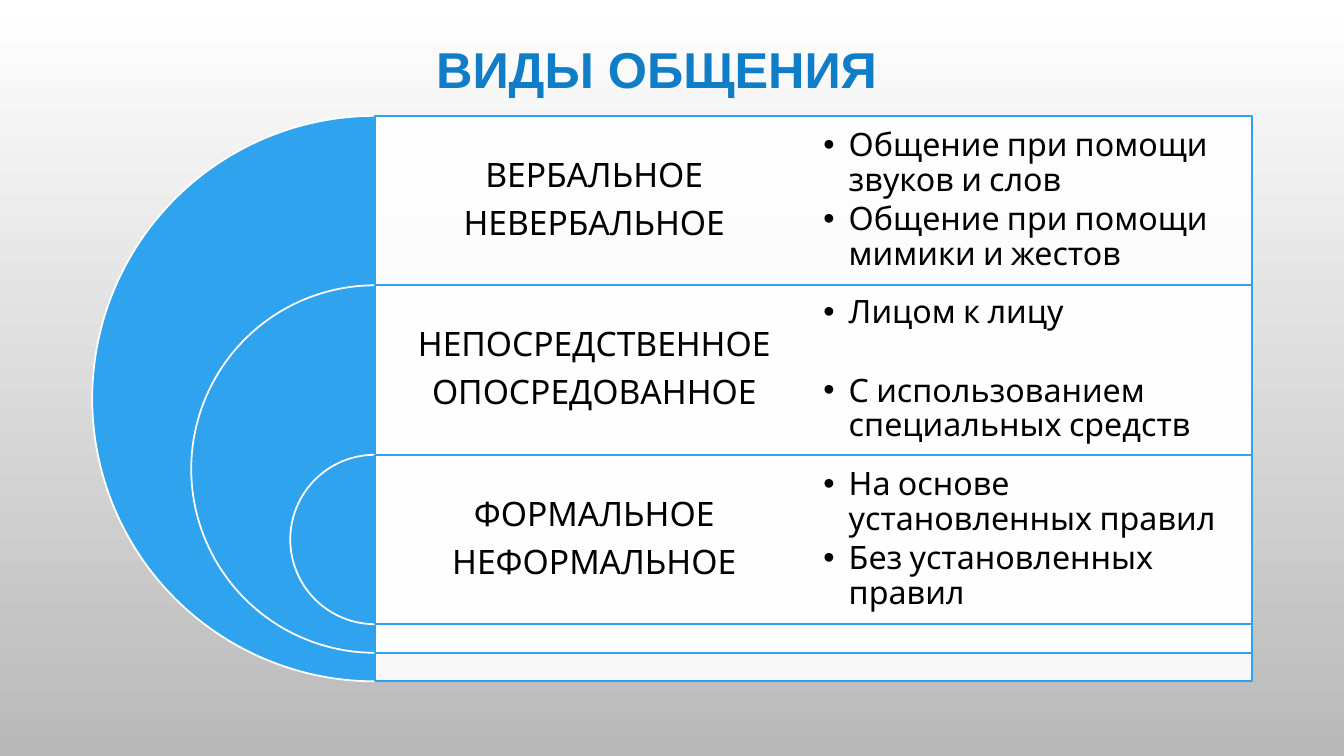
from lxml import etree
from pptx import Presentation
from pptx.dml.color import RGBColor
from pptx.enum.shapes import MSO_SHAPE as Shape
from pptx.enum.text import MSO_ANCHOR as Anchor, MSO_AUTO_SIZE as AutoSize, PP_ALIGN as Align
from pptx.oxml.ns import qn
from pptx.util import Cm, Pt

BLUE, WHITE, BLACK = "2FA3EE", "FFFFFF", "000000"
ROW_HEIGHT = 4.27
NESTING_STEP = 4.99
BULLET_GAP = 3
WIDE_GAP = 31

# Each row: kinds of communication, then (explanation, space after in points)
ROWS = [
    (["ВЕРБАЛЬНОЕ", "НЕВЕРБАЛЬНОЕ"],
     [("Общение при помощи звуков и слов", BULLET_GAP),
      ("Общение при помощи мимики и жестов", BULLET_GAP)]),
    (["НЕПОСРЕДСТВЕННОЕ", "ОПОСРЕДОВАННОЕ"],
     [("Лицом к лицу", WIDE_GAP),
      ("С использованием специальных средств", BULLET_GAP)]),
    (["ФОРМАЛЬНОЕ", "НЕФОРМАЛЬНОЕ"],
     [("На основе установленных правил", BULLET_GAP),
      ("Без установленных правил", BULLET_GAP)]),
]


def rgb(value):
    return RGBColor.from_string(value)


def paint_background(slide):
    fill = slide.background.fill
    fill.gradient()
    fill.gradient_angle = 270
    for stop, color, position in zip(fill.gradient_stops, (WHITE, "B9B9B9"), (0, 1)):
        stop.color.rgb = rgb(color)
        stop.position = position


def write_run(paragraph, text, font_name, size, color, bold=False):
    run = paragraph.add_run()
    run.text = text
    font = run.font
    font.name, font.size, font.bold = font_name, Pt(size), bold
    font.color.rgb = rgb(color)


def add_title(slide, left, top, width, height):
    title = slide.shapes.title
    title.left, title.top, title.width, title.height = map(Cm, (left, top, width, height))
    frame = title.text_frame
    frame.auto_size = AutoSize.NONE
    frame.vertical_anchor = Anchor.MIDDLE
    heading = frame.paragraphs[0]
    heading.alignment, heading.line_spacing = Align.CENTER, 0.9
    write_run(heading, "ВИДЫ ОБЩЕНИЯ", "Arial", 36, "107EC6", bold=True)


def add_filled(slide, preset, box, fill, line):
    shape = slide.shapes.add_shape(preset, *map(Cm, box))
    shape.shadow.inherit = False
    shape.fill.solid()
    shape.fill.fore_color.rgb = rgb(fill)
    shape.line.color.rgb = rgb(line)
    shape.line.width = Pt(1.25)
    return shape


def add_layer(slide, left, top, width, height):
    """Place a half disc to the left of a translucent panel of the same height."""
    half_disc = add_filled(slide, Shape.PIE, (left - height / 2, top, height, height), BLUE, WHITE)
    half_disc.adjustments[0], half_disc.adjustments[1] = 54, 162
    panel = add_filled(slide, Shape.RECTANGLE, (left, top, width, height), WHITE, BLUE)
    panel_color = panel.fill._xPr.find(qn("a:solidFill"))[0]
    etree.SubElement(panel_color, qn("a:alpha"), val="90000")


def add_bullet(paragraph):
    properties = paragraph._p.get_or_add_pPr()
    properties.set("marL", str(Cm(0.64)))
    properties.set("indent", str(-Cm(0.64)))
    etree.SubElement(properties, qn("a:buFont"), typeface="Arial")
    etree.SubElement(properties, qn("a:buChar"), char="•")


def add_cell(slide, box, lines, size, bulleted=False):
    frame = slide.shapes.add_textbox(*map(Cm, box)).text_frame
    frame.word_wrap = True
    frame.vertical_anchor = Anchor.MIDDLE
    frame.margin_left = frame.margin_right = frame.margin_top = frame.margin_bottom = Cm(0.25)
    for index, (text, gap) in enumerate(lines):
        paragraph = frame.add_paragraph() if index else frame.paragraphs[0]
        if bulleted:
            add_bullet(paragraph)
        else:
            paragraph.alignment = Align.CENTER
        paragraph.line_spacing, paragraph.space_after = 0.9, Pt(gap)
        write_run(paragraph, text, "Cabin", size, BLACK)


def add_kinds_diagram(slide, left, top, width, height):
    """Stack nested layers from the edge where the half discs meet the panels."""
    column = width / 2
    for index, (kinds, explanations) in enumerate(ROWS):
        row_top = top + index * ROW_HEIGHT
        add_layer(slide, left, row_top, width, height - index * NESTING_STEP)
        add_cell(slide, (left, row_top, column, ROW_HEIGHT), [(kind, 8.4) for kind in kinds], 24)
        add_cell(slide, (left + column, row_top, column, ROW_HEIGHT), explanations, 23, bulleted=True)


def main():
    deck = Presentation()
    deck.slide_width, deck.slide_height = Cm(33.87), Cm(19.05)
    slide = deck.slides.add_slide(deck.slide_layouts[5])
    paint_background(slide)
    add_title(slide, 6.2, 1.02, 20.7, 1.6)
    add_kinds_diagram(slide, 9.45, 2.92, 22.1, 14.25)
    deck.save("out.pptx")


if __name__ == "__main__":
    main()
